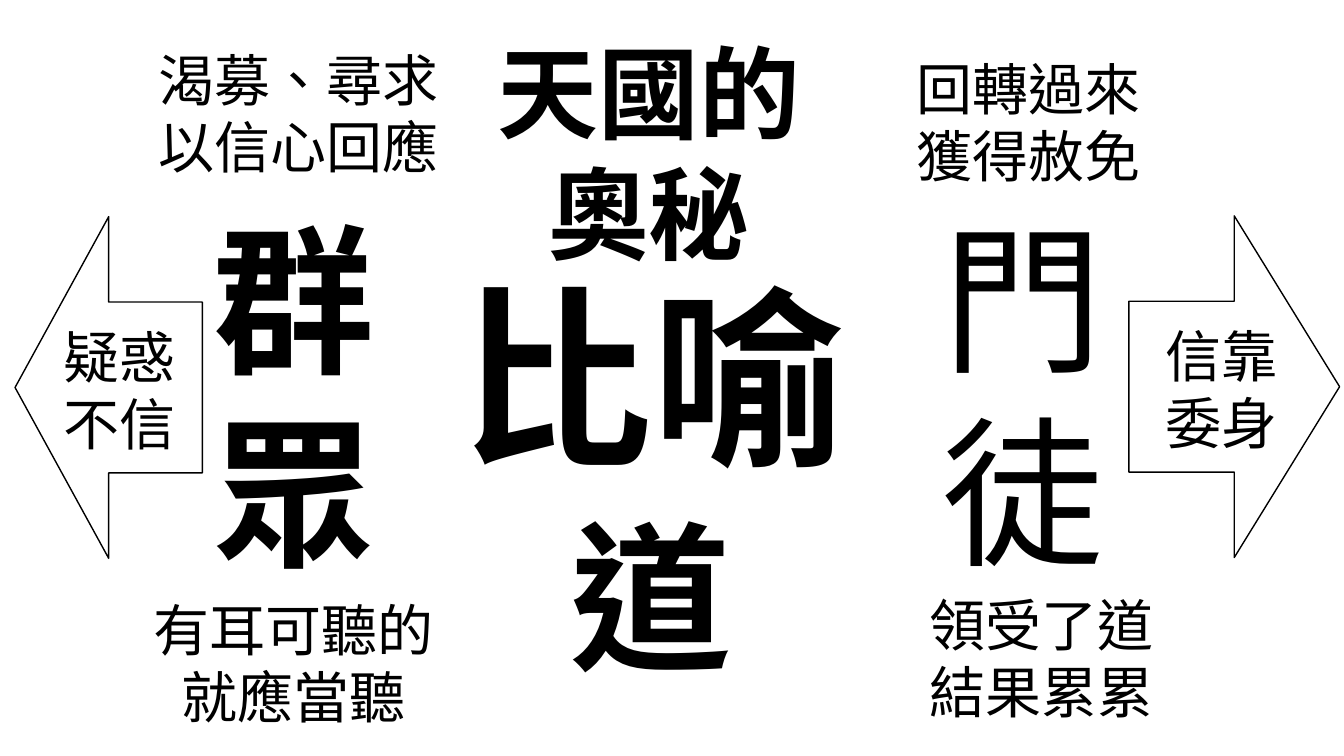
from dataclasses import dataclass

from lxml import etree
from pptx import Presentation, util as u
from pptx.dml import color
from pptx.enum import lang, shapes, text
from pptx.oxml import ns

COLOURS = {"ink": "000000"}
INK = color.RGBColor.from_string(COLOURS["ink"])
FONT = "Noto Sans CJK SC"
CAPTION_HEIGHT = 3.68
HEADING_HEIGHT = 10.08


@dataclass
class Box:
    """A rectangle in centimetres."""
    left: float
    top: float
    width: float
    height: float

    def inner(self, dx, dy, width, height):
        return Box(self.left + dx, self.top + dy, width, height)

    def lengths(self):
        return [u.Cm(n) for n in (self.left, self.top, self.width, self.height)]


def add_text(parent, box, lines, size=40, bold=False, align=text.PP_ALIGN.CENTER):
    """Write each line as a paragraph in a wrapping text box."""
    frame = parent.add_textbox(*box.lengths()).text_frame
    frame.word_wrap = True
    for index, line in enumerate(lines):
        para = frame.paragraphs[0] if index == 0 else frame.add_paragraph()
        para.alignment = align
        span = para.add_run()
        span.text = line
        span.font.size = u.Pt(size)
        span.font.bold = bold
        span.font.color.rgb = INK
        span.font.name = FONT
        span.font.language_id = lang.MSO_LANGUAGE_ID.TRADITIONAL_CHINESE
        east_asian = etree.SubElement(span.font._element, ns.qn("a:ea"))
        east_asian.set("typeface", FONT)


def add_centre(page, box):
    group = page.shapes.add_group_shape().shapes
    add_text(group, box.inner(2.01, 5.74, 10.87, 6.15), ["比喻"], size=138,
             bold=True, align=text.PP_ALIGN.LEFT)
    add_text(group, box.inner(0, 0, box.width, 6.4), ["天國的", "奧秘"],
             size=72, bold=True)
    add_text(group, box.inner(3.13, 11.76, 7.92, 5.18), ["道"], size=115, bold=True)


def add_crowd(page, box):
    add_text(page.shapes, box.inner(0, 0, box.width, CAPTION_HEIGHT),
             ["渴募、尋求", "以信心回應"])
    add_text(page.shapes, box.inner(0.33, 3.91, 7.67, HEADING_HEIGHT), ["群眾"],
             size=115, bold=True)
    add_text(page.shapes, box.inner(0.31, 13.86, 7.67, CAPTION_HEIGHT),
             ["有耳可聽的", "就應當聽"])


def add_disciples(page, box):
    add_text(page.shapes, box.inner(0, 0, box.width, CAPTION_HEIGHT),
             ["回轉過來", "獲得赦免"], align=text.PP_ALIGN.LEFT)
    add_text(page.shapes, box.inner(0, 3.66, 5.84, HEADING_HEIGHT), ["門徒"], size=115)
    add_text(page.shapes, box.inner(0.28, 13.52, 6.25, CAPTION_HEIGHT),
             ["領受了道", "結果累累"])


def add_arrow(page, box, preset, lines, label_dx, label_width):
    """Draw an outlined block arrow with a label across its middle."""
    group = page.shapes.add_group_shape().shapes
    arrow = group.add_shape(preset, *box.lengths())
    arrow.shadow.inherit = False
    arrow.fill.background()
    arrow.line.color.rgb = INK
    arrow.line.width = u.Pt(1)
    add_text(group, box.inner(label_dx, 2.54, label_width, CAPTION_HEIGHT), lines)


def main():
    deck = Presentation()
    deck.slide_width, deck.slide_height = u.Cm(33.87), u.Cm(19.05)
    page = deck.slides.add_slide(deck.slide_layouts[6])
    add_centre(page, Box(9.32, 0.64, 14.07, 16.94))
    add_crowd(page, Box(3.25, 1.02, 8.53, 17.54))
    add_arrow(page, Box(0.38, 5.46, 4.72, 8.61), shapes.MSO_SHAPE.LEFT_ARROW,
              ["疑惑", "不信"], 0, 5.26)
    add_arrow(page, Box(28.45, 5.44, 5.31, 8.61), shapes.MSO_SHAPE.RIGHT_ARROW,
              ["信靠", "委身"], -0.64, 5.94)
    add_disciples(page, Box(22.85, 1.24, 6.93, 17.2))
    deck.save("out.pptx")


if __name__ == "__main__":
    main()
